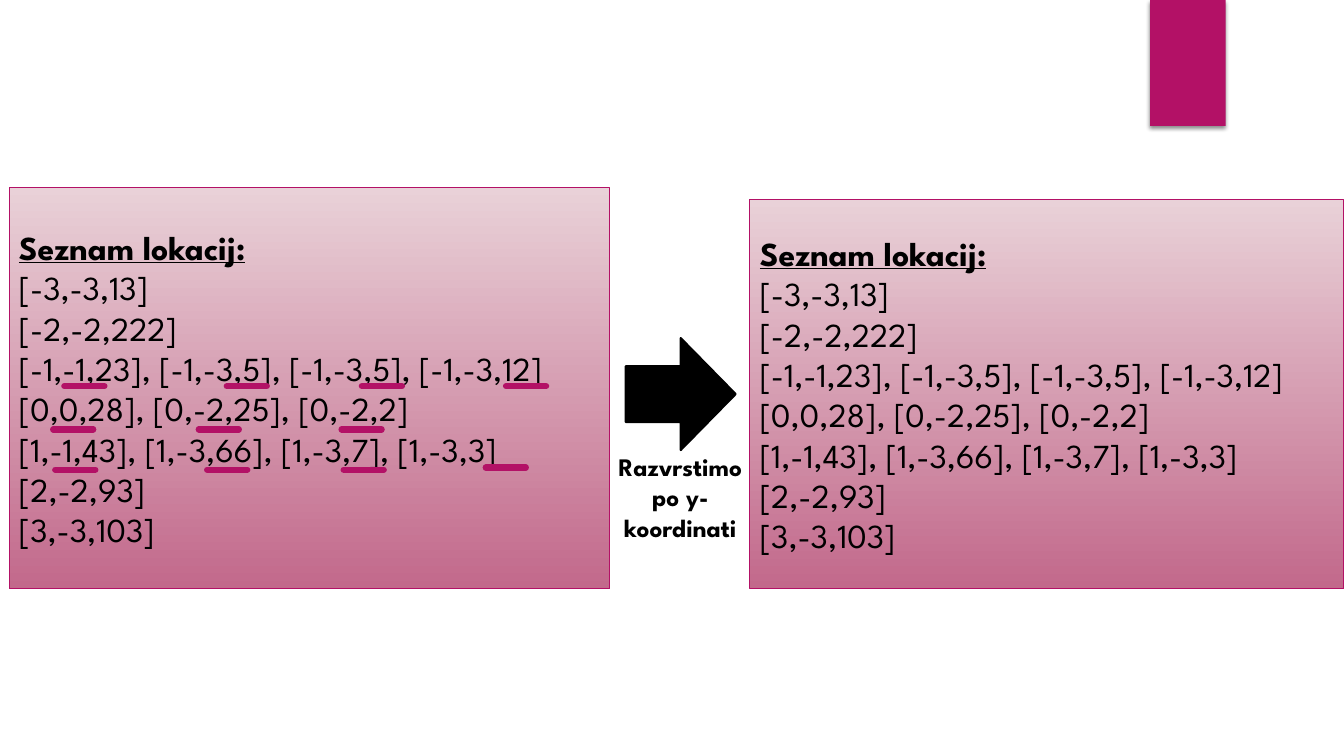
from lxml import etree
from pptx import Presentation
from pptx.dml.color import RGBColor
from pptx.enum import shapes, text
from pptx.oxml import parse_xml
from pptx.oxml.ns import nsdecls, qn
from pptx.util import Pt

MAGENTA = RGBColor(0xB3, 0x11, 0x66)
PALE = RGBColor(0xE9, 0xD1, 0xD8)
ROSE = RGBColor(0xC2, 0x69, 0x8B)
BLACK = RGBColor(0, 0, 0)
FONT = "League Spartan"

LOCATIONS = [
    "Seznam lokacij:",
    "[-3,-3,13]",
    "[-2,-2,222]",
    "[-1,-1,23], [-1,-3,5], [-1,-3,5], [-1,-3,12]",
    "[0,0,28], [0,-2,25], [0,-2,2]",
    "[1,-1,43], [1,-3,66], [1,-3,7], [1,-3,3]",
    "[2,-2,93]",
    "[3,-3,103]",
]

prs = Presentation()
prs.slide_width, prs.slide_height = Pt(960), Pt(540)
s = prs.slides.add_slide(prs.slide_layouts[6])


def add_shape(kind, left, top, width, height):
    sp = s.shapes.add_shape(kind, Pt(left), Pt(top), Pt(width), Pt(height))
    sp.shadow.inherit = False
    return sp


def set_font(p, size, bold):
    p.font.name = FONT
    p.font.size = Pt(size)
    p.font.bold = bold
    p.font.color.rgb = BLACK


# Corner tab with a soft shadow
tab = add_shape(shapes.MSO_SHAPE.RECTANGLE, 821.5, 0, 54, 90)
tab.fill.solid()
tab.fill.fore_color.rgb = MAGENTA
tab.line.fill.background()
effects = tab._element.spPr.find(qn("a:effectLst"))
effects.append(parse_xml(
    f'<a:outerShdw {nsdecls("a")} blurRad="{Pt(3)}" dist="{Pt(2)}" dir="5400000" rotWithShape="0">'
    '<a:srgbClr val="000000"><a:alpha val="45000"/></a:srgbClr></a:outerShdw>'))

# Location lists: sorted on the right, unsorted on the left
for left, top, width, height in [(535.7, 142.5, 424.3, 278), (6.5, 134, 429, 286.5)]:
    sp = add_shape(shapes.MSO_SHAPE.RECTANGLE, left, top, width, height)
    sp.fill.gradient()
    sp.fill.gradient_angle = 270
    for stop, color, position in zip(sp.fill.gradient_stops, (PALE, ROSE), (0, 1)):
        stop.color.rgb = color
        stop.position = position
    sp.line.color.rgb = MAGENTA
    sp.line.width = Pt(0.75)
    tf = sp.text_frame
    tf.word_wrap = True
    tf.vertical_anchor = text.MSO_ANCHOR.MIDDLE
    for i, line in enumerate(LOCATIONS):
        p = tf.paragraphs[0] if i == 0 else tf.add_paragraph()
        p.text = line
        p.alignment = text.PP_ALIGN.LEFT
        set_font(p, 24, i == 0)
        p.font.underline = i == 0

# Arrow and its label
arrow = add_shape(shapes.MSO_SHAPE.RIGHT_ARROW, 447, 241.5, 78.5, 80)
arrow.fill.solid()
arrow.fill.fore_color.rgb = BLACK
arrow.line.color.rgb = BLACK
arrow.line.width = Pt(1.5)

label = s.shapes.add_textbox(Pt(426), Pt(319), Pt(120), Pt(94.5))
tf = label.text_frame
tf.word_wrap = True
p = tf.paragraphs[0]
p.text = "Razvrstimo po y-koordinati"
p.alignment = text.PP_ALIGN.CENTER
set_font(p, 18, True)

# Underlines beneath the y-coordinates: height and left ends
UNDERLINES = [
    (275.8, [46, 162, 258.5, 361.5]),
    (306.7, [38, 142, 244]),
    (335.5, [39.5, 148, 245.5]),
    (334, [347]),
]
for y, starts in UNDERLINES:
    for x in starts:
        mark = s.shapes.add_connector(shapes.MSO_CONNECTOR.STRAIGHT, Pt(x), Pt(y), Pt(x + 28.6), Pt(y))
        mark.line.color.rgb = MAGENTA
        mark.line.width = Pt(4.5)
        mark.line._get_or_add_ln().set("cap", "rnd")
        etree.SubElement(mark._element.spPr, qn("a:effectLst"))

prs.save("out.pptx")
